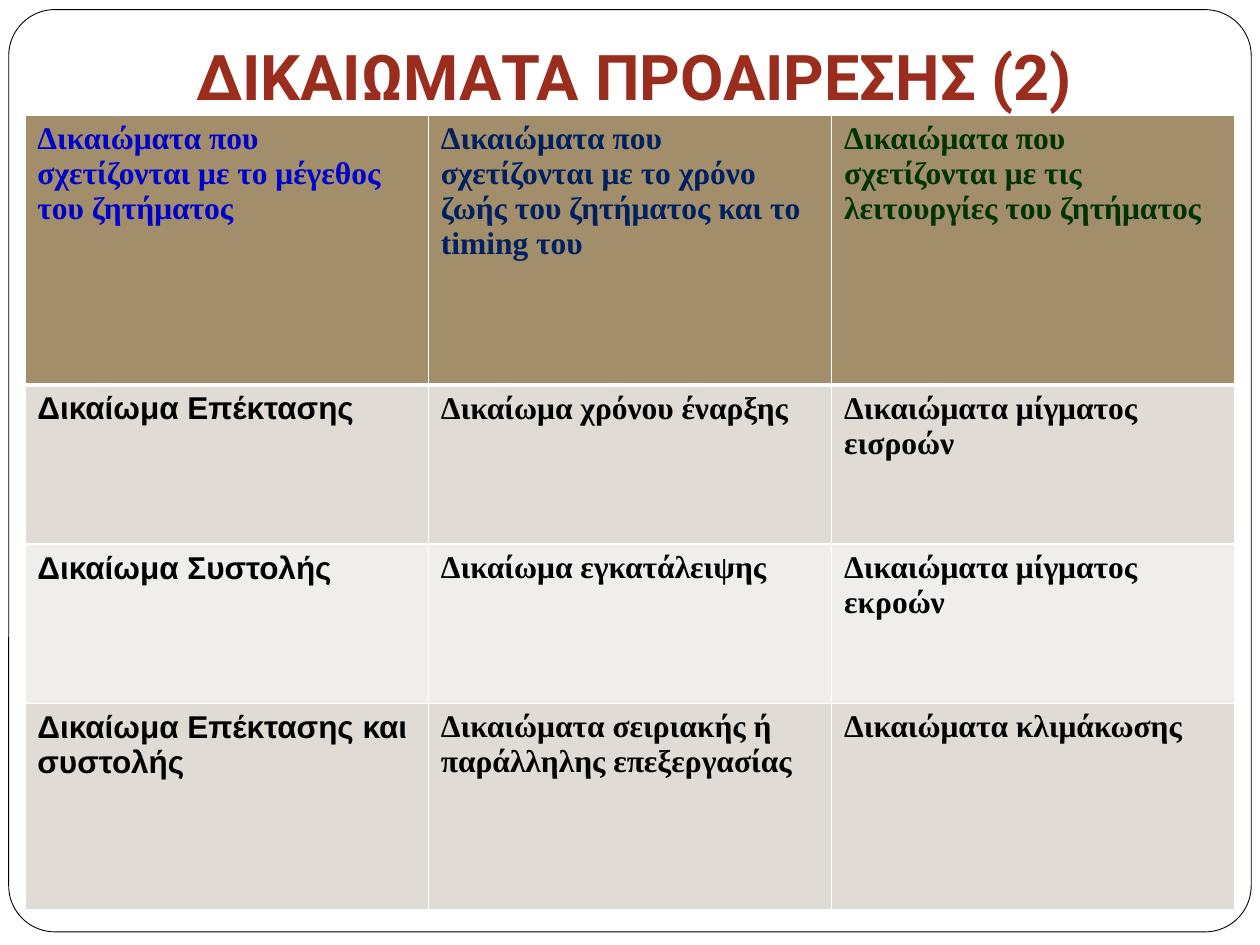
"""Build the option rights slide: a framed page, a title and a table."""
import pptx
import pptx.util
import pptx.dml.color
import pptx.enum.shapes
import pptx.enum.text
import pptx.oxml
import pptx.oxml.ns

Pt = pptx.util.Pt
INK = {
    "white": "FFFFFF", "black": "000000", "title": "9B2D1F",
    "head": "A28E6A", "dark": "E0DBD4", "light": "F0EEEB",
    "blue": "0000CC", "navy": "002060", "green": "003300",
}
HEADS = [
    ("Δικαιώματα που σχετίζονται με το μέγεθος του ζητήματος", "blue"),
    ("Δικαιώματα που σχετίζονται με το χρόνο ζωής του ζητήματος και το timing του", "navy"),
    ("Δικαιώματα που σχετίζονται με τις λειτουργίες του ζητήματος", "green"),
]
RIGHTS = [
    ("Δικαίωμα Επέκτασης", "Δικαίωμα χρόνου έναρξης", "Δικαιώματα μίγματος εισροών"),
    ("Δικαίωμα Συστολής", "Δικαίωμα εγκατάλειψης", "Δικαιώματα μίγματος εκροών"),
    ("Δικαίωμα Επέκτασης και συστολής",
     "Δικαιώματα σειριακής ή παράλληλης επεξεργασίας", "Δικαιώματα κλιμάκωσης"),
]
HIGHS = [154, 91, 91, 118]


def tint(name):
    """Return the named colour."""
    return pptx.dml.color.RGBColor.from_string(INK[name])


def paint(item, name):
    """Give a shape or cell a solid fill."""
    item.fill.solid()
    item.fill.fore_color.rgb = tint(name)


def write(frame, text, ink, look):
    """Put one run of text in a frame, with the font values in look."""
    run = frame.paragraphs[0].add_run()
    run.text = text
    run.font.color.rgb = tint(ink)
    for key, value in look.items():
        setattr(run.font, key, value)


def edge(cell, low):
    """Draw white borders round a cell, with the bottom one low points wide."""
    props = cell._tc.get_or_add_tcPr()
    sides = {"L": 1, "R": 1, "T": 1, "B": low}
    for place, (side, wide) in enumerate(sides.items()):
        props.insert(place, pptx.oxml.parse_xml(
            f'<a:ln{side} {pptx.oxml.ns.nsdecls("a")} w="{int(Pt(wide))}">'
            f'<a:solidFill><a:srgbClr val="{INK["white"]}"/></a:solidFill>'
            f'</a:ln{side}>'))


def add_frame(slide, left, top, width, height):
    """Draw the rounded page frame."""
    kind = pptx.enum.shapes.MSO_SHAPE.ROUNDED_RECTANGLE
    frame = slide.shapes.add_shape(kind, Pt(left), Pt(top), Pt(width), Pt(height))
    frame.adjustments[0] = 0.05
    frame.shadow.inherit = False
    paint(frame, "white")
    frame.line.color.rgb = tint("black")
    frame.line.width = Pt(0.5)


def add_title(slide, left, top, width, height):
    """Write the centred title at the foot of its box."""
    frame = slide.shapes.add_textbox(Pt(left), Pt(top), Pt(width), Pt(height)).text_frame
    form = {"word_wrap": True, "margin_bottom": Pt(7.2),
            "vertical_anchor": pptx.enum.text.MSO_ANCHOR.BOTTOM}
    for key, value in form.items():
        setattr(frame, key, value)
    frame.paragraphs[0].alignment = pptx.enum.text.PP_ALIGN.CENTER
    write(frame, "ΔΙΚΑΙΩΜΑΤΑ ΠΡΟΑΙΡΕΣΗΣ (2)", "title",
          {"name": "Roboto", "size": Pt(36), "bold": True})


def add_rights(slide, left, top, width, height):
    """Lay out the table of rights, with row heights shared by HIGHS."""
    rows = [HEADS] + [[(text, "black") for text in row] for row in RIGHTS]
    table = slide.shapes.add_table(
        len(rows), len(HEADS), Pt(left), Pt(top), Pt(width), Pt(height)).table
    for col in table.columns:
        col.width = Pt(width / len(HEADS))
    for y, row in enumerate(rows):
        table.rows[y].height = Pt(height * HIGHS[y] / sum(HIGHS))
        fill = "head" if y == 0 else "dark" if y % 2 else "light"
        for x, (text, ink) in enumerate(row):
            cell = table.cell(y, x)
            paint(cell, fill)
            edge(cell, 1 if y else 3)
            face = "Arial" if y and x == 0 else "Times New Roman"
            write(cell.text_frame, text, ink,
                  {"name": face, "size": Pt(18), "bold": True})


def main():
    """Build and save the slide."""
    deck = pptx.Presentation()
    deck.slide_width, deck.slide_height = Pt(720), Pt(540)
    slide = deck.slides.add_slide(deck.slide_layouts[6])
    add_frame(slide, 5, 5.5, 710, 527)
    add_title(slide, 25, 15, 675, 57)
    add_rights(slide, 14.2, 66, 691.6, 454)
    deck.save("out.pptx")


if __name__ == "__main__":
    main()
